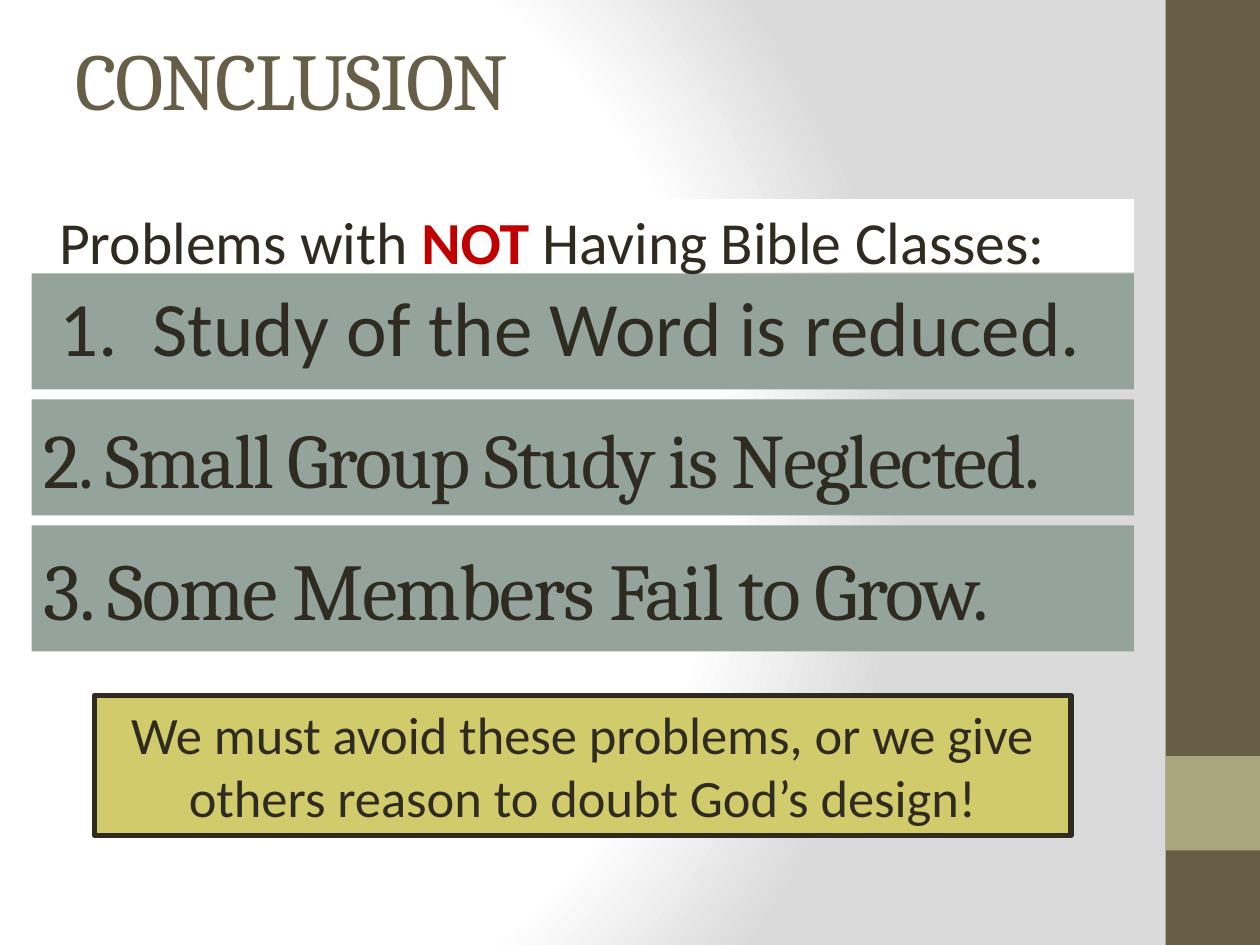
from lxml import etree
from pptx import Presentation
from pptx import util as u
from pptx.dml.color import RGBColor
from pptx.enum import shapes, text
from pptx.oxml import parse_xml
from pptx.oxml.ns import nsdecls, qn

COLORS = {
    "brown": "675E47", "tan": "A9A57C", "sage": "95A39D", "ink": "2F2B20",
    "red": "C00000", "yellow": "D2CB6C", "white": "FFFFFF", "gray": "DADADA",
}
LEFT, WIDTH = 0.25, 8.75  # shared by the heading and the three points


def rgb(name):
    return RGBColor.from_string(COLORS[name])


def set_background(s):
    s.background.fill.solid()
    solid = s.element.find(".//" + qn("p:bgPr")).find(qn("a:solidFill"))
    stops = "".join(
        f'<a:gs pos="{pos * 1000}"><a:srgbClr val="{COLORS[name]}"/></a:gs>'
        for pos, name in ((0, "white"), (75, "white"), (100, "gray")))
    gradient = parse_xml(
        f'<a:gradFill {nsdecls("a")} rotWithShape="1"><a:gsLst>{stops}</a:gsLst>'
        '<a:path path="circle"><a:fillToRect l="20000" t="50000" r="100000" b="50000"/>'
        '</a:path></a:gradFill>')
    solid.getparent().replace(solid, gradient)


def place(sp, left, top, width, height):
    sp.left, sp.top = u.Inches(left), u.Inches(top)
    sp.width, sp.height = u.Inches(width), u.Inches(height)


def add_box(s, left, top, width, height, fill, line=None):
    sp = s.shapes.add_shape(shapes.MSO_SHAPE.RECTANGLE, u.Inches(left),
                            u.Inches(top), u.Inches(width), u.Inches(height))
    sp.shadow.inherit = False
    sp.fill.solid()
    sp.fill.fore_color.rgb = rgb(fill)
    if line:
        sp.line.color.rgb = rgb(line)
        sp.line.width = u.Pt(3)
    else:
        sp.line.fill.background()
    return sp


def write(sp, runs, size, font="Calibri", anchor=text.MSO_ANCHOR.TOP,
          align=text.PP_ALIGN.LEFT, indent=0, spacing=0):
    """Fill sp with one paragraph; runs are (wording, colour, bold)."""
    tf = sp.text_frame
    tf.word_wrap = True
    tf.auto_size = text.MSO_AUTO_SIZE.NONE
    tf.vertical_anchor = anchor
    p = tf.paragraphs[0]
    p.alignment = align
    pPr = p._p.get_or_add_pPr()
    pPr.set("marL", str(u.Inches(indent)))
    pPr.set("indent", "0")
    etree.SubElement(pPr, qn("a:buNone"))
    for wording, color, bold in runs:
        r = p.add_run()
        r.text = wording
        r.font.name, r.font.size, r.font.bold = font, u.Pt(size), bold
        r.font.color.rgb = rgb(color)
        if spacing:
            r._r.get_or_add_rPr().set("spc", str(spacing * 100))


def write_cambria(sp, wording, size, color="ink"):
    write(sp, [(wording, color, False)], size, "Cambria",
          text.MSO_ANCHOR.MIDDLE, spacing=-1)


def main():
    prs = Presentation()
    prs.slide_width, prs.slide_height = u.Inches(10), u.Inches(7.5)
    s = prs.slides.add_slide(prs.slide_layouts[1])
    set_background(s)

    # Side band
    add_box(s, 9.25, 0, 0.75, 7.5, "brown")
    add_box(s, 9.25, 6, 0.75, 0.75, "tan")

    # Title
    title = s.shapes.title
    place(title, 0.5, 0, 8.33, 1.25)
    write_cambria(title, "CONCLUSION", 46, "brown")

    # First point
    body = s.placeholders[1]
    place(body, LEFT, 2.17, WIDTH, 0.92)
    body.fill.solid()
    body.fill.fore_color.rgb = rgb("sage")
    write(body, [("1.  Study of the Word is reduced.", "ink", False)], 44, indent=0.12)

    # Remaining points
    for top, height, size, wording in (
            (3.17, 0.92, 44, "2. Small Group Study is Neglected."),
            (4.17, 1, 46, "3. Some Members Fail to Grow.")):
        write_cambria(add_box(s, LEFT, top, WIDTH, height, "sage"), wording, size)

    # Heading above the points
    heading = add_box(s, LEFT, 1.58, WIDTH, 0.58, "white")
    write(heading, [("Problems with ", "ink", False), ("NOT", "red", True),
                    (" Having Bible Classes:", "ink", False)], 34.1, indent=0.12)

    # Closing appeal
    appeal = add_box(s, 0.75, 5.52, 7.75, 1.11, "yellow", line="ink")
    write(appeal, [("We must avoid these problems, or we give others reason "
                    "to doubt God’s design!", "ink", False)], 30,
          align=text.PP_ALIGN.CENTER)

    prs.save("out.pptx")


if __name__ == "__main__":
    main()
